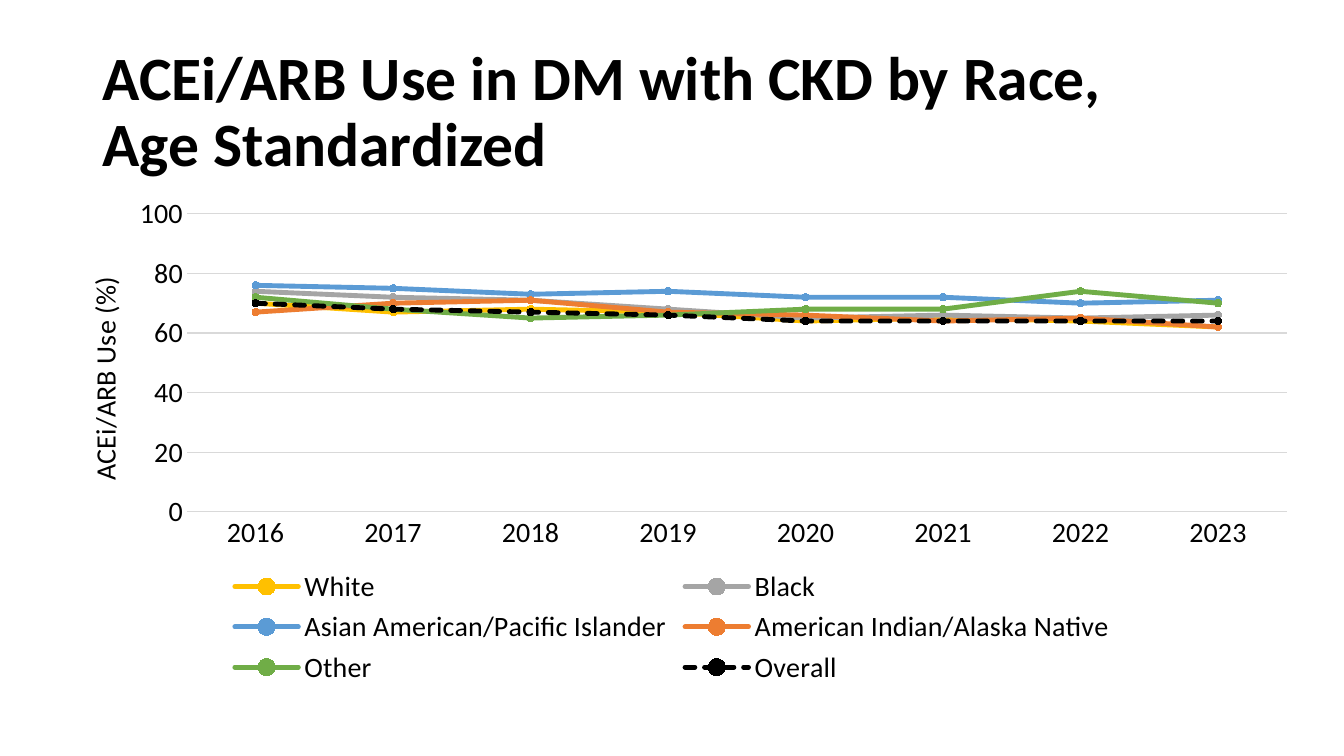
from pptx import Presentation
from pptx.chart.data import CategoryChartData
from pptx.dml.color import RGBColor
from pptx.enum.chart import XL_CHART_TYPE as CHART, XL_LEGEND_POSITION as LEGEND
from pptx.enum.chart import XL_MARKER_STYLE as MARKER, XL_TICK_MARK as TICK
from pptx.enum.dml import MSO_LINE
from pptx.enum.text import MSO_ANCHOR, MSO_AUTO_SIZE, PP_ALIGN
from pptx.oxml import parse_xml
from pptx.oxml.ns import nsdecls, qn
from pptx.util import Pt

TITLE = "ACEi/ARB Use in DM with CKD by Race, \vAge Standardized"
AXIS_TITLE = "ACEi/ARB Use (%)"
YEARS = [str(year) for year in range(2016, 2024)]
SERIES = [  # name, colour, percentages by year
    ("White", "FFC000", (70, 67, 68, 67, 64, 65, 64, 62)),
    ("Black", "A5A5A5", (74, 72, 71, 68, 65, 66, 65, 66)),
    ("Asian American/Pacific Islander", "5B9BD5", (76, 75, 73, 74, 72, 72, 70, 71)),
    ("American Indian/Alaska Native", "ED7D31", (67, 70, 71, 67, 66, 64, 65, 62)),
    ("Other", "70AD47", (72, 68, 65, 66, 68, 68, 74, 70)),
    ("Overall", "000000", (70, 68, 67, 66, 64, 64, 64, 64)),
]
DASHED = "Overall"
FONT, BLACK, GRID = "Calibri", "000000", "D9D9D9"
TITLE_BOX = (66, 29, 828, 104)
CHART_BOX = (30, 133, 900, 360)
PLOT_LAYOUT = {"layoutTarget": "inner", "xMode": "edge", "yMode": "edge",
               "x": 0.115, "y": 0.055, "w": 0.873, "h": 0.591}
AXIS_TITLE_LAYOUT = {"xMode": "edge", "yMode": "edge", "x": 0.03, "y": 0.17}


def rgb(color):
    return RGBColor.from_string(color)


def style_font(font, size, bold=False):
    font.name, font.size, font.bold = FONT, Pt(size), bold
    font.color.rgb = rgb(BLACK)


def style_line(line, color, width):
    line.color.rgb = rgb(color)
    line.width = Pt(width)


def set_layout(parent, index, values):
    """Place a chart part by fractions of the chart area."""
    for old in parent.findall(qn("c:layout")):
        parent.remove(old)
    items = "".join(f'<c:{key} val="{val}"/>' for key, val in values.items())
    parent.insert(index, parse_xml(
        f'<c:layout {nsdecls("c")}><c:manualLayout>{items}</c:manualLayout></c:layout>'))


def add_title(slide):
    sp = slide.shapes.title
    sp.left, sp.top, sp.width, sp.height = map(Pt, TITLE_BOX)
    tf = sp.text_frame
    tf.text = TITLE
    tf.word_wrap = True
    tf.auto_size = MSO_AUTO_SIZE.NONE
    tf.vertical_anchor = MSO_ANCHOR.MIDDLE
    p = tf.paragraphs[0]
    p.alignment, p.line_spacing = PP_ALIGN.LEFT, 0.9
    for r in p.runs:
        style_font(r.font, 44, bold=True)


def add_use_chart(slide):
    data = CategoryChartData(number_format="0")
    data.categories = YEARS
    for name, _, values in SERIES:
        data.add_series(name, values)
    chart = slide.shapes.add_chart(CHART.LINE_MARKERS, *map(Pt, CHART_BOX), data).chart
    style_font(chart.font, 20)
    chart.has_title = False
    chart.has_legend = True
    chart.legend.position = LEGEND.BOTTOM
    chart.legend.include_in_layout = False
    style_font(chart.legend.font, 20)
    set_layout(chart._chartSpace.chart.plotArea, 0, PLOT_LAYOUT)
    style_axes(chart.category_axis, chart.value_axis)
    style_series(chart.plots[0])


def style_axes(years, use):
    for axis in (years, use):
        axis.major_tick_mark = axis.minor_tick_mark = TICK.NONE
        style_font(axis.tick_labels.font, 20)
    style_line(years.format.line, GRID, 0.75)
    use.format.line.fill.background()
    use.minimum_scale, use.maximum_scale, use.major_unit = 0, 100, 20
    use.tick_labels.number_format = "0"
    use.tick_labels.number_format_is_linked = False
    use.has_major_gridlines = True
    style_line(use.major_gridlines.format.line, GRID, 0.75)
    p = use.axis_title.text_frame.paragraphs[0]
    p.text = AXIS_TITLE
    style_font(p.runs[0].font, 20)
    set_layout(use.axis_title._element, 1, AXIS_TITLE_LAYOUT)


def style_series(plot):
    plot.vary_by_categories = False
    for series, (name, color, _) in zip(plot.series, SERIES):
        series.smooth = False
        style_line(series.format.line, color, 3.5)
        series.format.line._get_or_add_ln().set("cap", "rnd")
        if name == DASHED:
            series.format.line.dash_style = MSO_LINE.SQUARE_DOT
        marker = series.marker
        marker.style, marker.size = MARKER.CIRCLE, 5
        marker.format.fill.solid()
        marker.format.fill.fore_color.rgb = rgb(color)
        style_line(marker.format.line, color, 0.75)


def main():
    prs = Presentation()
    prs.slide_width, prs.slide_height = Pt(960), Pt(540)
    slide = prs.slides.add_slide(prs.slide_layouts.get_by_name("Title Only"))
    add_title(slide)
    add_use_chart(slide)
    prs.save("out.pptx")


if __name__ == "__main__":
    main()
